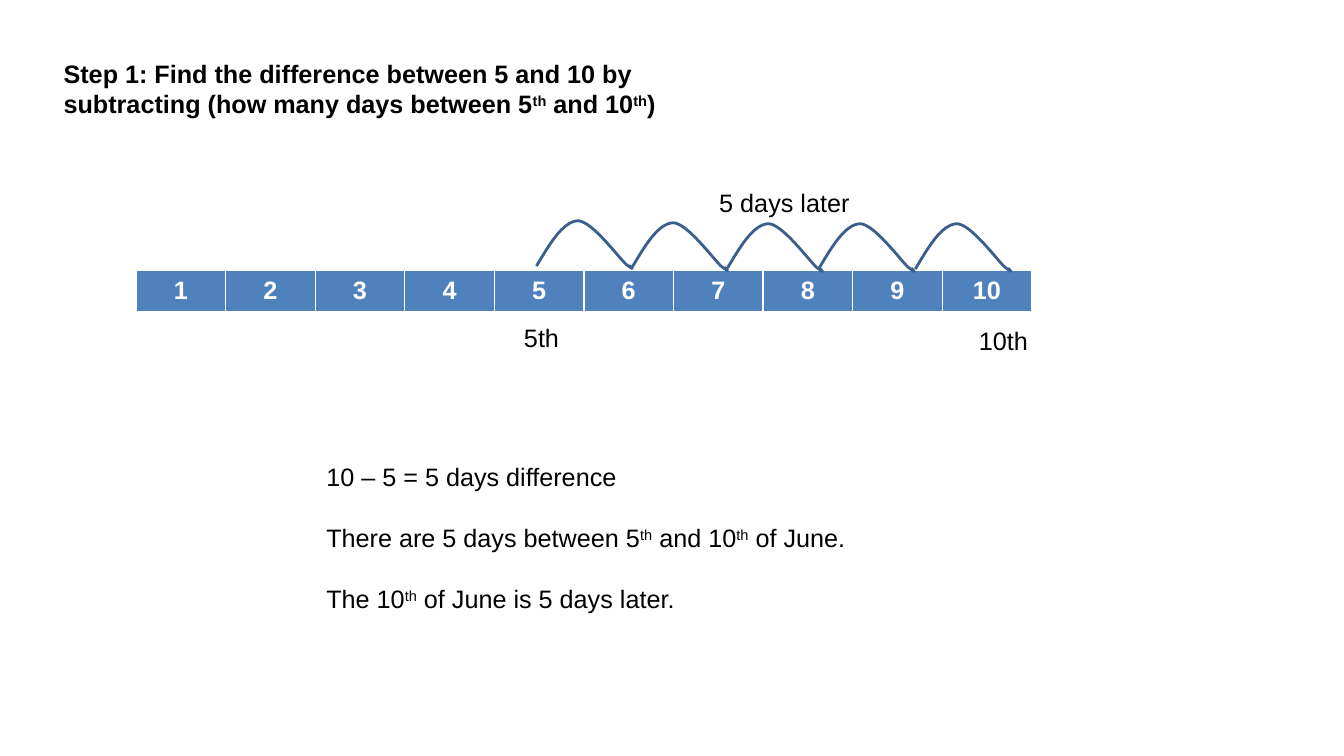
from lxml.etree import SubElement
from pptx import Presentation
from pptx.dml.color import RGBColor
from pptx.enum.text import MSO_ANCHOR, MSO_AUTO_SIZE, PP_ALIGN
from pptx.oxml.ns import qn
from pptx.util import Pt

BLACK = RGBColor(0, 0, 0)
WHITE = RGBColor(255, 255, 255)
BLUE = RGBColor(0x4F, 0x81, 0xBD)
NAVY = RGBColor(0x3A, 0x5F, 0x8C)

START = (0, 32.4)
CURVES = [
    [(9.4, 16.6), (18.7, 0.7), (29.5, 0)],
    [(39.6, 0), (58.3, 25.9), (64.1, 31.2)],
    [(70.6, 36), (68.4, 34), (66.2, 31.8)],
]


def style(font, color=BLACK, bold=False):
    font.name = "Arial"
    font.size = Pt(18)
    font.color.rgb = color
    font.bold = bold


def write(para, text, bold=False):
    for i, part in enumerate(text.split("^")):
        run = para.add_run()
        run.text = part
        style(run.font, bold=bold)
        if i % 2:
            run.font._element.set("baseline", "30000")


def add_title(slide, left, top, width, height):
    title = slide.shapes.title
    title.left, title.top = Pt(left), Pt(top)
    title.width, title.height = Pt(width), Pt(height)
    frame = title.text_frame
    frame.word_wrap = True
    frame.auto_size = MSO_AUTO_SIZE.NONE
    frame.vertical_anchor = MSO_ANCHOR.TOP
    para = frame.paragraphs[0]
    para.alignment = PP_ALIGN.LEFT
    write(para, "Step 1: Find the difference between 5 and 10 by subtracting "
          "(how many days between 5^th^ and 10^th^)", True)


def add_text(slide, left, top, width, height, lines):
    box = slide.shapes.add_textbox(Pt(left), Pt(top), Pt(width), Pt(height))
    frame = box.text_frame
    frame.word_wrap = True
    for i, line in enumerate(lines):
        para = frame.add_paragraph() if i else frame.paragraphs[0]
        if i:
            para.space_before = Pt(22)
        write(para, line)


def add_strip(slide, left, top, width, height, count):
    frame = slide.shapes.add_table(1, count, Pt(left), Pt(top), Pt(width), Pt(height))
    table = frame.table
    table.horz_banding = False
    for i, cell in enumerate(table.rows[0].cells):
        table.columns[i].width = Pt(width / count)
        cell.fill.solid()
        cell.fill.fore_color.rgb = BLUE
        cell.vertical_anchor = MSO_ANCHOR.MIDDLE
        para = cell.text_frame.paragraphs[0]
        para.text = str(i + 1)
        para.alignment = PP_ALIGN.CENTER
        style(para.runs[0].font, WHITE, True)


def add_hop(slide, left, top, width, height):
    form = slide.shapes.build_freeform(Pt(START[0]), Pt(START[1]))
    form.add_line_segments([(Pt(width / 2), 0), (Pt(width), Pt(height))], close=False)
    hop = form.convert_to_shape(Pt(left), Pt(top))
    route = hop._element.find(".//" + qn("a:path"))
    for line in route.findall(qn("a:lnTo")):
        route.remove(line)
    for curve in CURVES:
        bend = SubElement(route, qn("a:cubicBezTo"))
        for x, y in curve:
            SubElement(bend, qn("a:pt"), x=str(Pt(x)), y=str(Pt(y)))
    hop.shadow.inherit = False
    hop.fill.background()
    hop.line.color.rgb = NAVY
    hop.line.width = Pt(2)


def add_number_line(slide, left, top, width, height):
    add_strip(slide, left, top, width, height, 10)
    for x, y in [(286, 35.3), (354, 33.9), (422, 33.2), (487.5, 33.2), (556.6, 33.2)]:
        add_hop(slide, left + x, top - y, 68.4, 34)
    add_text(slide, left + 270, top + 34, 46, 29, ["5th"])
    add_text(slide, left + 595, top + 36, 53, 29, ["10th"])
    add_text(slide, left + 409.5, top - 62.5, 130, 29, ["5 days later"])


def main():
    deck = Presentation()
    deck.slide_width, deck.slide_height = Pt(960), Pt(540)
    slide = deck.slides.add_slide(deck.slide_layouts[5])
    add_title(slide, 38.2, 38.2, 512.6, 51)
    add_number_line(slide, 97.2, 193, 640, 29.5)
    add_text(slide, 226, 326, 450, 117, [
        "10 – 5 = 5 days difference",
        "There are 5 days between 5^th^ and 10^th^ of June.",
        "The 10^th^ of June is 5 days later.",
    ])
    deck.save("out.pptx")


if __name__ == "__main__":
    main()
